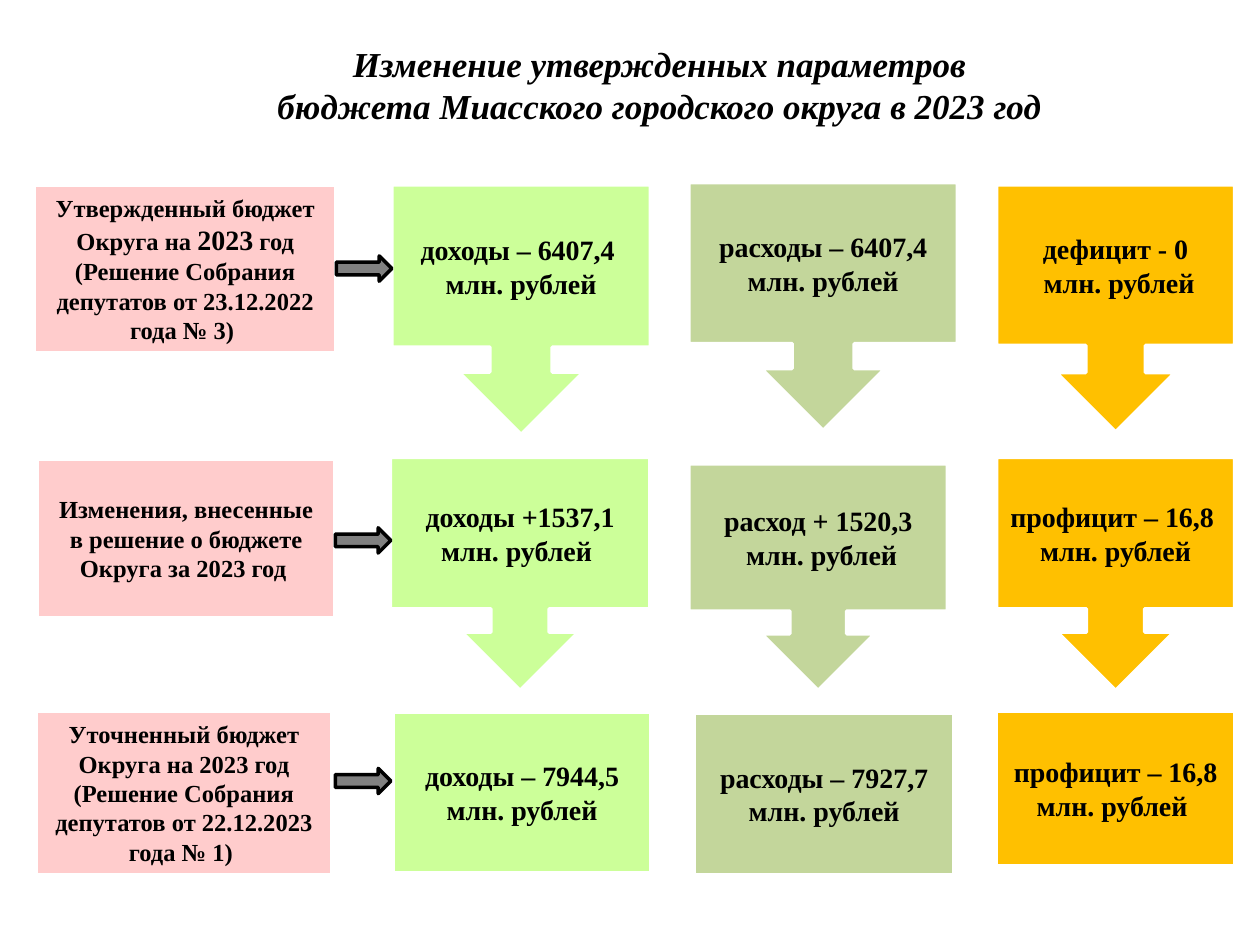
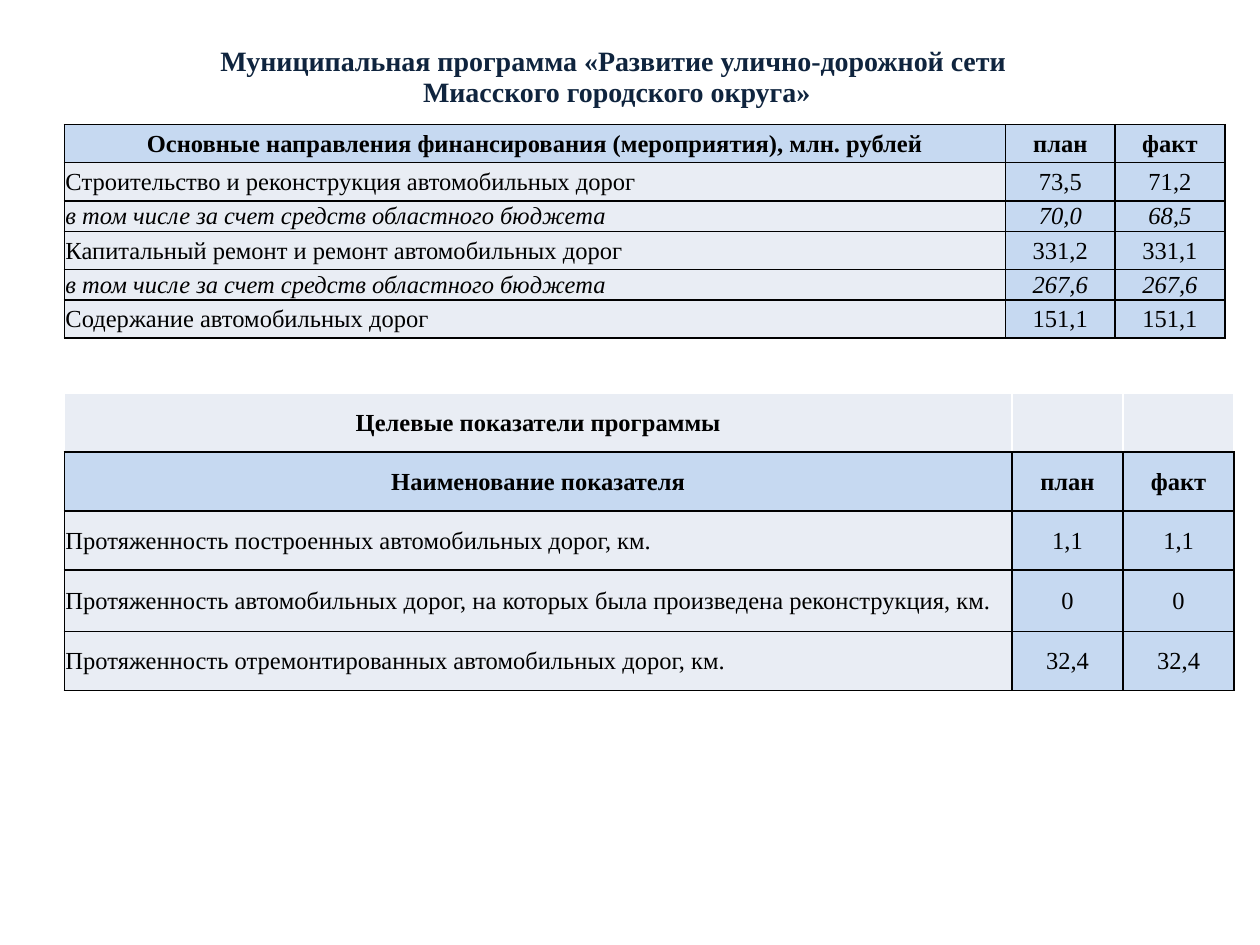
from lxml import etree
from pptx import Presentation
from pptx import util as u
from pptx.dml.color import RGBColor
from pptx.enum import shapes, text
from pptx.oxml import ns

FONT = "Times New Roman"
BLACK, WHITE, NAVY, GREY = "000000", "FFFFFF", "0F243E", "808080"
PINK, GREEN, OLIVE, AMBER = "FFCCCC", "CCFF99", "C3D69B", "FFC000"
PALE, BLUE = "E9EDF4", "C6D9F1"
RECT = shapes.MSO_SHAPE.RECTANGLE
CALLOUT = shapes.MSO_SHAPE.DOWN_ARROW_CALLOUT
ARROW = shapes.MSO_SHAPE.RIGHT_ARROW
CENTER, LEFT = text.PP_ALIGN.CENTER, text.PP_ALIGN.LEFT
MIDDLE = text.MSO_ANCHOR.MIDDLE


def rgb(value):
    return RGBColor.from_string(value)


def cm(*values):
    return [u.Cm(v) for v in values]


def write(tf, paragraphs, size=14, color=BLACK, bold=False, italic=False,
          align=CENTER, spacing=None):
    """Each paragraph is a string or a list of (string, size) runs."""
    for i, content in enumerate(paragraphs):
        p = tf.paragraphs[0] if i == 0 else tf.add_paragraph()
        p.alignment = align
        if spacing:
            p.line_spacing = spacing
        runs = [(content, size)] if isinstance(content, str) else content
        for words, points in runs:
            r = p.add_run()
            r.text = words
            f = r.font
            f.name, f.size = FONT, u.Pt(points)
            f.bold, f.italic = bold, italic
            f.color.rgb = rgb(color)


def add_block(s, kind, box, fill, line=WHITE, paragraphs=(), size=16):
    sp = s.shapes.add_shape(kind, *cm(*box))
    sp.shadow.inherit = False
    sp.fill.solid()
    sp.fill.fore_color.rgb = rgb(fill)
    sp.line.color.rgb = rgb(line)
    sp.line.width = u.Pt(2)
    sp.text_frame.word_wrap = True
    sp.text_frame.vertical_anchor = MIDDLE
    write(sp.text_frame, paragraphs, size=size, bold=True)


def add_title(s, box, paragraphs, **style):
    tf = s.shapes.add_textbox(*cm(*box)).text_frame
    tf.word_wrap = True
    write(tf, paragraphs, bold=True, **style)
    return tf


# Slide 1: budget stages, one row each; boxes are relative to the row corner
ROW_LEFT = 0.7
STAGES = [
    dict(top=3.73, kind=CALLOUT, arrow=(6.08, 1.43), cells=[
        ((0, 0, 6.07, 3.38),
         [[("Утвержденный бюджет Округа на ", 14), ("2023", 16),
           (" год (Решение Собрания депутатов от 23.12.2022 года № 3) ", 14)]]),
        ((7.2, 0, 5.21, 5.03), ["доходы – 6407,4 ", "млн. рублей"]),
        ((13.19, -0.05, 5.41, 5), ["расходы – 6407,4 млн. рублей"]),
        ((19.39, 0, 4.8, 4.98), ["дефицит - 0", " млн. рублей"])]),
    dict(top=9.22, kind=CALLOUT, arrow=(6.06, 1.42), cells=[
        ((0.06, 0.03, 5.99, 3.2),
         ["Изменения, внесенные в решение о бюджете Округа за 2023 год "]),
        ((7.17, 0, 5.23, 4.7), ["доходы +1537,1", "млн. рублей "]),
        ((13.19, 0.13, 5.21, 4.57), ["расход + 1520,3", " млн. рублей"]),
        ((19.39, 0, 4.8, 4.7), ["профицит – 16,8 ", "млн. рублей"])]),
    dict(top=14.33, kind=RECT, arrow=(6.06, 1.16), cells=[
        ((0.04, 0, 5.94, 3.3),
         ["Уточненный бюджет Округа на 2023 год (Решение Собрания "
          "депутатов от 22.12.2023 года № 1) "]),
        ((7.22, 0.02, 5.21, 3.25), ["доходы – 7944,5", "млн. рублей"]),
        ((13.3, 0.05, 5.23, 3.25), ["расходы – 7927,7", "млн. рублей"]),
        ((19.39, 0, 4.8, 3.12), ["профицит – 16,8", "млн. рублей "])]),
]


def stage_row(s, left, top, kind, arrow, cells):
    colors = (PINK, GREEN, OLIVE, AMBER)
    for i, ((x, y, w, h), paragraphs) in enumerate(cells):
        add_block(s, kind if i else RECT, (left + x, top + y, w, h), colors[i],
                  paragraphs=paragraphs, size=16 if i else 14)
    add_block(s, ARROW, (left + arrow[0], top + arrow[1], 1.12, 0.51), GREY, BLACK)


def changes_slide(prs):
    s = prs.slides.add_slide(prs.slide_layouts[6])
    for stage in STAGES:
        stage_row(s, ROW_LEFT, **stage)
    tf = add_title(s, (4.29, 0.74, 16.99, 1.96),
                   ["Изменение утвержденных параметров бюджета "
                    "Миасского городского округа в 2023 год"],
                   size=20, italic=True)
    pPr = tf.paragraphs[0]._p.get_or_add_pPr()
    pPr.set("marL", str(u.Cm(1.02)))
    pPr.set("indent", "0")


# Slide 2: programme tables
FINANCE = [
    ("Основные направления финансирования (мероприятия), млн. рублей", "план", "факт"),
    ("Строительство и реконструкция автомобильных дорог", "73,5", "71,2"),
    ("в том числе за счет средств областного бюджета", "70,0", "68,5"),
    ("Капитальный ремонт и ремонт автомобильных дорог", "331,2", "331,1"),
    ("в том числе за счет средств областного бюджета", "267,6", "267,6"),
    ("Содержание автомобильных дорог", "151,1", "151,1"),
]
TARGETS = [
    ("Целевые показатели программы", "", ""),
    ("Наименование показателя", "план", "факт"),
    ("Протяженность построенных автомобильных дорог, км.", "1,1", "1,1"),
    ("Протяженность автомобильных дорог, на которых была произведена "
     "реконструкция, км.", "0", "0"),
    ("Протяженность отремонтированных автомобильных дорог, км.", "32,4", "32,4"),
]


def set_borders(cell, upper):
    """Black lines; the three upper sides turn to the given colour."""
    tcPr = cell._tc.get_or_add_tcPr()
    for side, color in zip("LRTB", (upper, upper, upper, BLACK)):
        ln = etree.SubElement(tcPr, ns.qn("a:ln" + side), w=str(u.Pt(1)))
        fill = etree.SubElement(ln, ns.qn("a:solidFill"))
        etree.SubElement(fill, ns.qn("a:srgbClr"), val=color)


def add_table(s, left, top, widths, heights, rows, header):
    """Rows above the header row are captions with white borders."""
    frame = s.shapes.add_table(len(rows), len(widths),
                               *cm(left, top, sum(widths), sum(heights)))
    table = frame.table
    table.first_row = table.horz_banding = False
    for column, width in zip(table.columns, widths):
        column.width = u.Cm(width)
    for i, row in enumerate(rows):
        table.rows[i].height = u.Cm(heights[i])
        for j, words in enumerate(row):
            cell = table.cell(i, j)
            set_borders(cell, WHITE if i < header else BLACK)
            cell.fill.solid()
            shaded = i == header or (i > header and j > 0)
            cell.fill.fore_color.rgb = rgb(BLUE if shaded else PALE)
            cell.vertical_anchor = MIDDLE
            cell.margin_left = cell.margin_right = cell.margin_top = u.Cm(0.02)
            cell.margin_bottom = 0
            if words:
                write(cell.text_frame, [words], bold=i <= header,
                      italic=row[0].startswith("в том числе"),
                      align=CENTER if i <= header or j else LEFT)


def programme_slide(prs):
    s = prs.slides.add_slide(prs.slide_layouts[6])
    add_title(s, (0.79, 0.84, 23.29, 1.68),
              ["Муниципальная программа «Развитие улично-дорожной сети ",
               "Миасского городского округа»"],
              size=16, color=NAVY, spacing=0.9)
    add_table(s, 1.3, 7.92, (19.1, 2.24, 2.24), (1.19, 1.19, 1.19, 1.24, 1.19),
              TARGETS, header=1)
    add_table(s, 1.3, 2.51, (18.97, 2.21, 2.21), (0.77, 0.77, 0.5, 0.77, 0.5, 0.77),
              FINANCE, header=0)


def main():
    prs = Presentation()
    prs.slide_width, prs.slide_height = cm(25.4, 19.05)
    changes_slide(prs)
    programme_slide(prs)
    prs.save("out.pptx")


if __name__ == "__main__":
    main()
